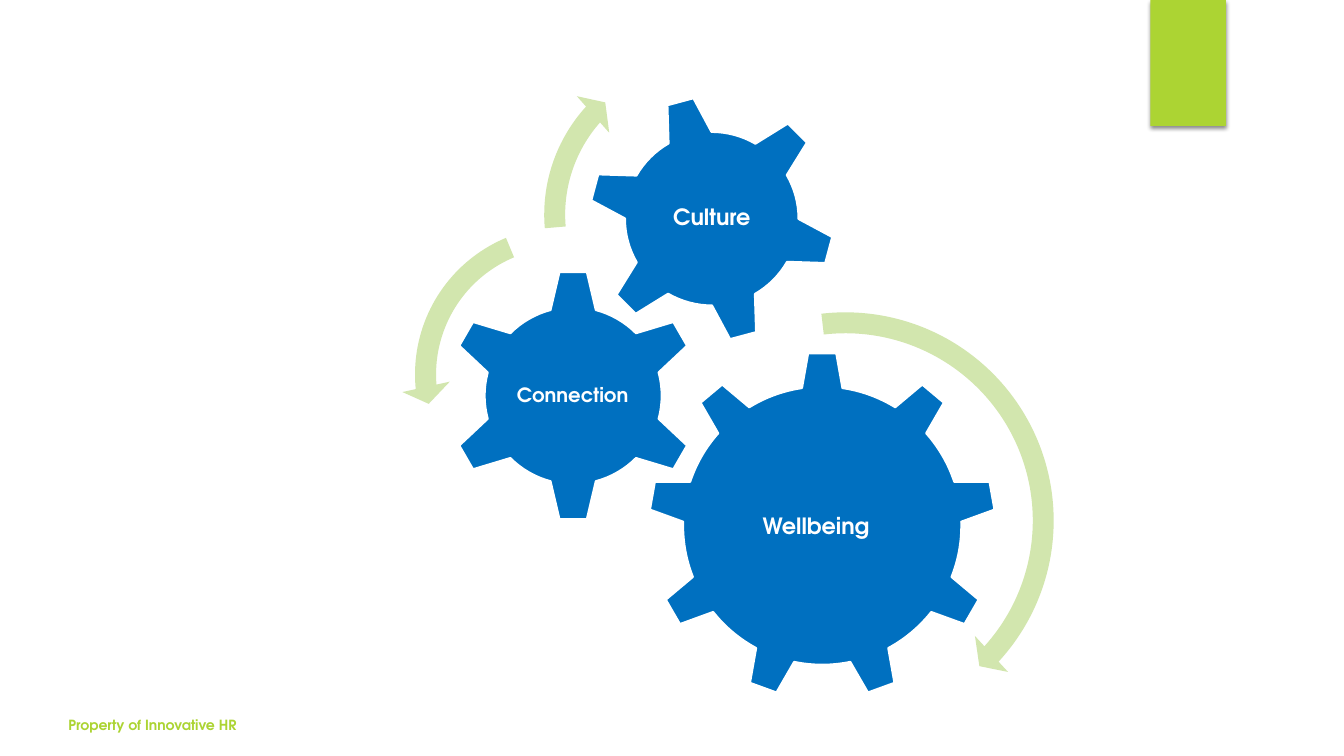
from lxml.etree import SubElement
from pptx import Presentation
from pptx.dml.color import RGBColor
from pptx.enum.shapes import MSO_SHAPE
from pptx.enum.text import MSO_ANCHOR, PP_ALIGN
from pptx.oxml.ns import qn
from pptx.util import Inches, Pt

BLUE, LIME, PALE, WHITE = "0070C0", "ACD433", "D2E6AE", "FFFFFF"


def paint(target, color):
    """Set a solid colour on a fill."""
    target.solid()
    target.fore_color.rgb = RGBColor.from_string(color)


class Board:
    """Holds the style and the current slide."""

    font = "TeX Gyre Adventor"

    def __init__(self, deck):
        """Add a blank slide to the deck."""
        self.slide = deck.slides.add_slide(deck.slide_layouts[6])

    def shape(self, kind, box, color):
        """Add a flat filled shape without outline."""
        item = self.slide.shapes.add_shape(kind, *map(Inches, box))
        item.shadow.inherit = False
        paint(item.fill, color)
        item.line.fill.background()
        return item

    def tab(self, box, color):
        """Add a rectangle with a soft shadow below it."""
        item = self.shape(MSO_SHAPE.RECTANGLE, box, color)
        effects = item.element.spPr.find(qn("a:effectLst"))
        shade = SubElement(effects, qn("a:outerShdw"), blurRad=str(Pt(3)),
                           dist=str(Pt(2)), dir="5400000", rotWithShape="0")
        black = SubElement(shade, qn("a:srgbClr"), val="000000")
        SubElement(black, qn("a:alpha"), val="45000")

    def gear(self, kind, left, top, size, turn=0):
        """Add a blue gear with a white outline."""
        item = self.shape(kind, (left, top, size, size), BLUE)
        item.rotation = turn
        paint(item.line.fill, WHITE)
        item.line.width = Pt(1.5)

    def arrow(self, kind, left, top, size, bends):
        """Add a pale curved arrow."""
        item = self.shape(kind, (left, top, size, size), PALE)
        for spot, bend in enumerate(bends):
            item.adjustments[spot] = bend

    def text(self, box, runs, color, anchor):
        """Add a text box from (words, size, bold) runs."""
        frame = self.slide.shapes.add_textbox(*map(Inches, box)).text_frame
        frame.word_wrap = True
        frame.vertical_anchor = anchor
        for words, size, bold in runs:
            run = frame.paragraphs[0].add_run()
            run.text = words
            run.font.name = self.font
            run.font.size = Pt(size)
            run.font.bold = bold
            run.font.color.rgb = RGBColor.from_string(color)
        return frame

    def label(self, box, runs):
        """Add a centred white gear label."""
        frame = self.text(box, runs, WHITE, MSO_ANCHOR.MIDDLE)
        frame.margin_left = frame.margin_right = Inches(0.02)
        frame.margin_top = frame.margin_bottom = Inches(0.02)
        frame.paragraphs[0].alignment = PP_ALIGN.CENTER
        frame.paragraphs[0].line_spacing = 0.9


def main():
    """Build and save the slide."""
    deck = Presentation()
    deck.slide_width, deck.slide_height = Inches(13.33), Inches(7.5)
    board = Board(deck)
    board.tab((11.41, 0, 0.75, 1.25), LIME)

    board.gear(MSO_SHAPE.GEAR_9, 6.43, 3.49, 3.45)
    board.label((7.12, 4.29, 2.06, 1.77),
                [("Wellbeing", 16, True), (" ", 29, False)])
    board.gear(MSO_SHAPE.GEAR_6, 4.43, 2.67, 2.51)
    board.label((5.06, 3.31, 1.24, 1.24), [("Connection", 14, True)])
    board.gear(MSO_SHAPE.GEAR_6, 5.83, 0.94, 2.46, 345)
    board.label((6.37, 1.48, 1.38, 1.38), [("Culture", 16, True)])

    right, left = MSO_SHAPE.CIRCULAR_ARROW, MSO_SHAPE.LEFT_CIRCULAR_ARROW
    board.arrow(right, 6.18, 2.96, 4.41, (0.047, 2.99, 25.44, 158.03, 0.055))
    board.arrow(left, 3.98, 2.11, 3.21, (0.065, 4.3, 104.89, 148.38, 0.075))
    board.arrow(right, 5.26, 0.4, 3.46, (0.06, 3.94, 133.14, 105.08, 0.07))

    board.text((0.58, 6.99, 4.22, 0.33),
               [("Property of Innovative HR", 10, True)],
               LIME, MSO_ANCHOR.BOTTOM)
    deck.save("out.pptx")


if __name__ == "__main__":
    main()
